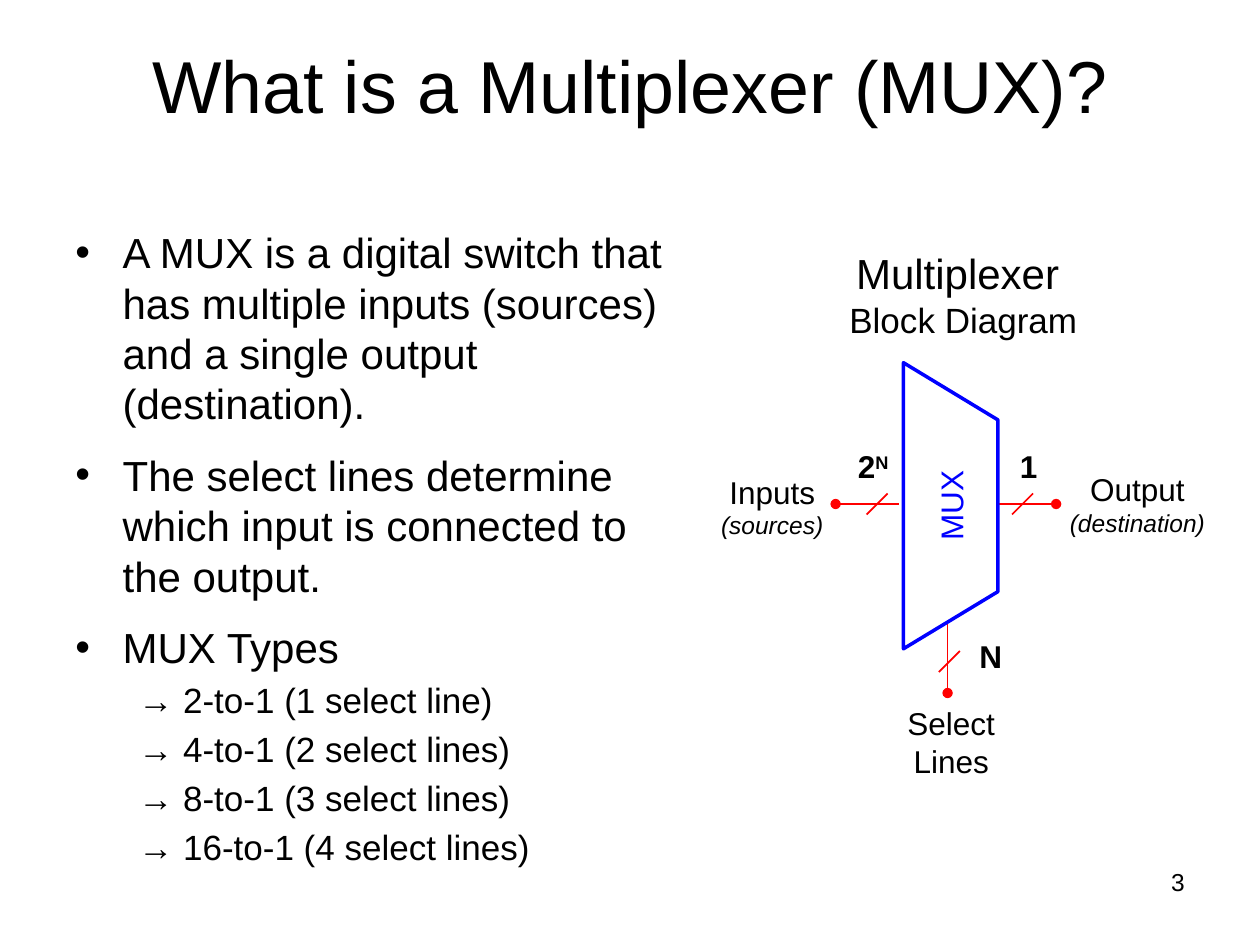
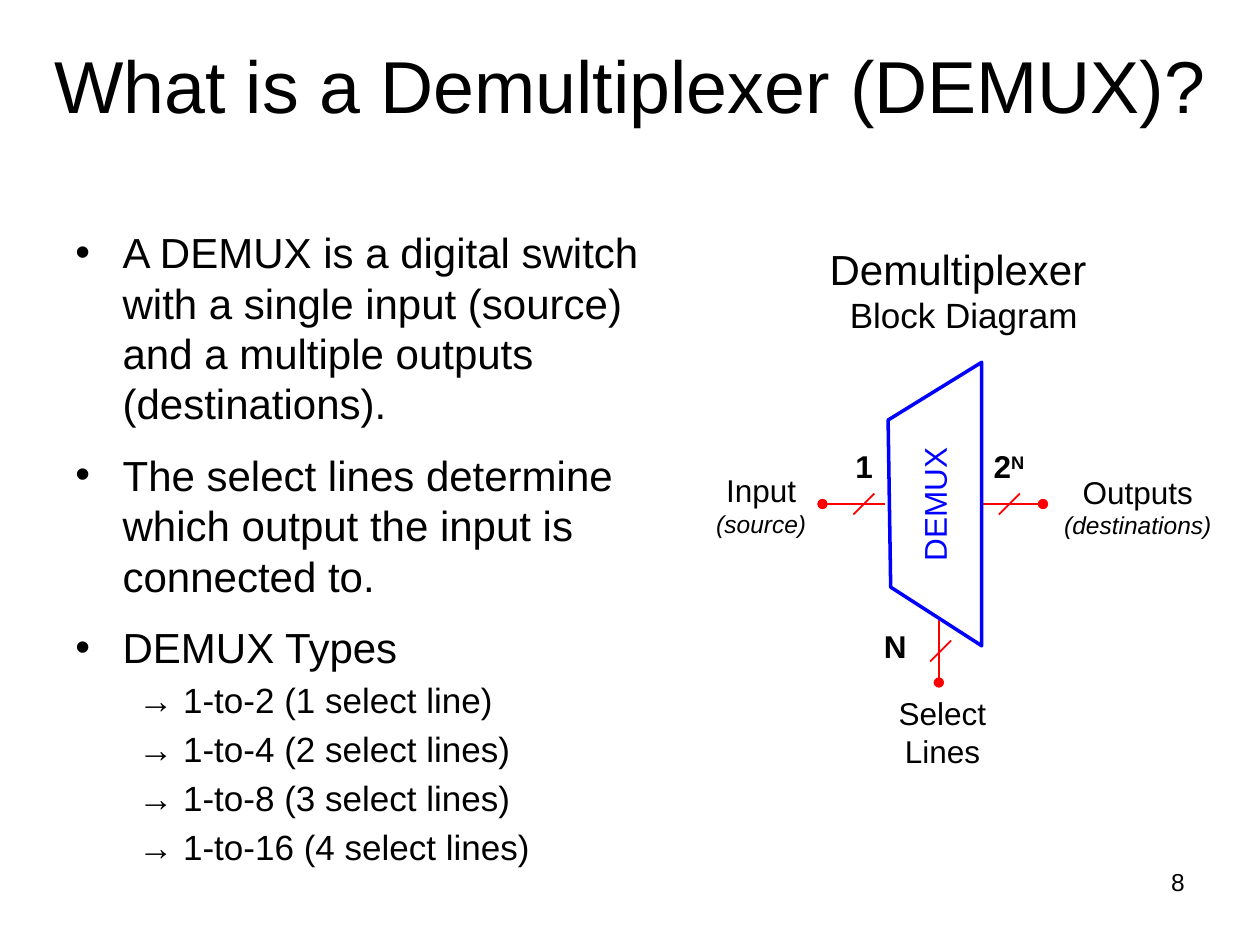
from lxml import etree
from pptx import Presentation
from pptx.dml.color import RGBColor
from pptx.enum.shapes import MSO_CONNECTOR, MSO_SHAPE
from pptx.enum.text import MSO_ANCHOR, PP_ALIGN
from pptx.oxml.ns import qn
from pptx.util import Pt

# Shared style
COLORS = {"text": "000000", "wire": "FF0000", "block": "0000FF", "paper": "FFFFFF"}
FONT = "Arial"
WIRE_Y = 288
WIRE_LENGTH, SELECT_LENGTH = 36, 43.2
TICK = 6

# Content: a line is a string or a list of (text, format) runs
SMALL = {"size": 14, "italic": True}
POWER = [("2", {}), ("N", {"superscript": True})]

SLIDES = [
    {
        "title": "What is a Multiplexer (MUX)?",
        "number": "3",
        "points": [
            "A MUX is a digital switch that has multiple inputs (sources) "
            "and a single output (destination).",
            "The select lines determine which input is connected to the output.",
            "MUX Types",
        ],
        "types": ["2-to-1 (1 select line)", "4-to-1 (2 select lines)",
                  "8-to-1 (3 select lines)", "16-to-1 (4 select lines)"],
        "body_width": 360,
        "heading": ("Multiplexer ", (477.5, 138.2, 146, 60.5)),
        "input": ("Inputs", "(sources)", (404.5, 266.5, 73.5, 46)),
        "output": ("Output", "(destination)", (604, 265, 92, 46)),
        "counts": [(POWER, (482.5, 252, 33, 29)), ("1", (575.5, 252, 24.5, 29)),
                   ("N", (552.5, 360.5, 27, 29))],
        "input_tip": 477.5, "output_tip": 603.5, "select_tip": (541.5, 396),
        "block": "MUX",
    },
    {
        "title": "What is a Demultiplexer (DEMUX)?",
        "number": "8",
        "points": [
            "A DEMUX is a digital switch with a single input (source) "
            "and a multiple outputs (destinations).",
            "The select lines determine which output the input is connected to.",
            "DEMUX Types",
        ],
        "types": ["1-to-2 (1 select line)", "1-to-4 (2 select lines)",
                  "1-to-8 (3 select lines)", "1-to-16 (4 select lines)"],
        "body_width": 354,
        "heading": ("Demultiplexer ", (466.5, 135.4, 168.5, 60)),
        "input": ("Input", "(source)", (402, 265.5, 66, 46)),
        "output": ("Outputs", "(destinations)", (600.5, 266.5, 99.5, 46)),
        "counts": [("1", (481.5, 252, 24.5, 29)), (POWER, (560, 252, 33, 29)),
                   ("N", (498, 355, 27, 29))],
        "input_tip": 470, "output_tip": 596, "select_tip": (536.5, 390),
        "block": "DEMUX",
        "outline": [(509, 335.5), (507.5, 240), (561, 207), (561, 369)],
    },
]


def rgb(name):
    return RGBColor.from_string(COLORS[name])


def write(paragraph, text, size=18, color="text", bold=False, italic=False,
          superscript=False, align=PP_ALIGN.CENTER):
    """Add one formatted run to a paragraph."""
    paragraph.alignment = align
    run = paragraph.add_run()
    run.text = text
    font = run.font
    font.name, font.size, font.bold, font.italic = FONT, Pt(size), bold, italic
    font.color.rgb = rgb(color)
    if superscript:
        font._element.set("baseline", "30000")


def add_box(slide, box, lines, wrap=False, anchor=MSO_ANCHOR.TOP, **look):
    label = slide.shapes.add_textbox(*map(Pt, box))
    frame = label.text_frame
    frame.word_wrap, frame.vertical_anchor = wrap, anchor
    for i, line in enumerate(lines):
        paragraph = frame.paragraphs[0] if i == 0 else frame.add_paragraph()
        for text, extra in [(line, {})] if isinstance(line, str) else line:
            write(paragraph, text, **{**look, **extra})
    return label


def indent(paragraph, left, hanging, bullet=None):
    props = paragraph._p.get_or_add_pPr()
    props.set("marL", str(Pt(left)))
    props.set("indent", str(-Pt(hanging)))
    if bullet:
        etree.SubElement(props, qn("a:buFont")).set("typeface", FONT)
        etree.SubElement(props, qn("a:buChar")).set("char", bullet)
    else:
        etree.SubElement(props, qn("a:buNone"))


def add_body(slide, page):
    points, types = page["points"], page["types"]
    lines = points + [[("→ " + kind, {"size": 20})] for kind in types]
    body = add_box(slide, (36, 126, page["body_width"], 396), lines,
                   wrap=True, size=24, align=PP_ALIGN.LEFT)
    for i, paragraph in enumerate(body.text_frame.paragraphs):
        if i < len(points):
            indent(paragraph, 27, 27, "•")
            paragraph.space_after = Pt(12 if i < len(points) - 1 else 0)
        else:
            indent(paragraph, 58.5, 22.5)
            paragraph.space_before = Pt(4)


def add_wire(slide, start, end, dot=False):
    wire = slide.shapes.add_connector(MSO_CONNECTOR.STRAIGHT, *map(Pt, start + end))
    wire.line.color.rgb, wire.line.width = rgb("wire"), Pt(1)
    if dot:
        etree.SubElement(wire.line._get_or_add_ln(), qn("a:headEnd")).set("type", "oval")
    etree.SubElement(wire._element.spPr, qn("a:effectLst"))


def add_tick(slide, x, y):
    add_wire(slide, (x - TICK, y + TICK), (x + TICK, y - TICK))


def style_block(block):
    block.shadow.inherit = False
    block.fill.solid()
    block.fill.fore_color.rgb = rgb("paper")
    block.line.color.rgb, block.line.width = rgb("block"), Pt(2)


def add_block(slide, page):
    if "outline" in page:
        first, *others = [(Pt(x), Pt(y)) for x, y in page["outline"]]
        builder = slide.shapes.build_freeform(*first, scale=1.0)
        builder.add_line_segments(others, close=True)
        style_block(builder.convert_to_shape())
        name = add_box(slide, (494, 273.5, 80, 29), [page["block"]],
                       color="block", align=PP_ALIGN.LEFT)
        name.rotation = 270
    else:
        block = slide.shapes.add_shape(MSO_SHAPE.FLOWCHART_MANUAL_OPERATION,
                                       *map(Pt, (461.5, 262, 163.5, 54)))
        style_block(block)
        block.rotation = 270
        block.text_frame.vertical_anchor = MSO_ANCHOR.MIDDLE
        write(block.text_frame.paragraphs[0], page["block"], color="block")


def add_diagram(slide, page):
    heading, heading_box = page["heading"]
    add_box(slide, heading_box, [heading, [("Block Diagram", {"size": 20})]], size=24)

    # Wires with end dots, each crossed by a tick
    left, right = page["input_tip"], page["output_tip"]
    select_x, select_y = page["select_tip"]
    add_wire(slide, (right, WIRE_Y), (right - WIRE_LENGTH, WIRE_Y), dot=True)
    add_wire(slide, (left, WIRE_Y), (left + WIRE_LENGTH, WIRE_Y), dot=True)
    add_wire(slide, (select_x, select_y), (select_x, select_y - SELECT_LENGTH), dot=True)
    add_tick(slide, right - 19.2, WIRE_Y)
    add_tick(slide, left + 23.7, WIRE_Y)
    add_tick(slide, select_x + 1, select_y - 18)

    # Labels
    for name, role, box in (page["input"], page["output"]):
        add_box(slide, box, [name, [(role, SMALL)]])
    add_box(slide, (select_x - 30.5, select_y + 3, 65, 51), ["Select", "Lines"])
    for count, box in page["counts"]:
        add_box(slide, box, [count], bold=True)

    add_block(slide, page)


def main():
    deck = Presentation()
    deck.slide_width, deck.slide_height = Pt(720), Pt(540)
    for page in SLIDES:
        slide = deck.slides.add_slide(deck.slide_layouts[6])
        add_box(slide, (0, 0, 720, 96), [page["title"]], wrap=True,
                anchor=MSO_ANCHOR.MIDDLE, size=42)
        add_body(slide, page)
        add_box(slide, (516, 492, 168, 37.5), [page["number"]], wrap=True,
                size=14, align=PP_ALIGN.RIGHT)
        add_diagram(slide, page)
    deck.save("out.pptx")


if __name__ == "__main__":
    main()
